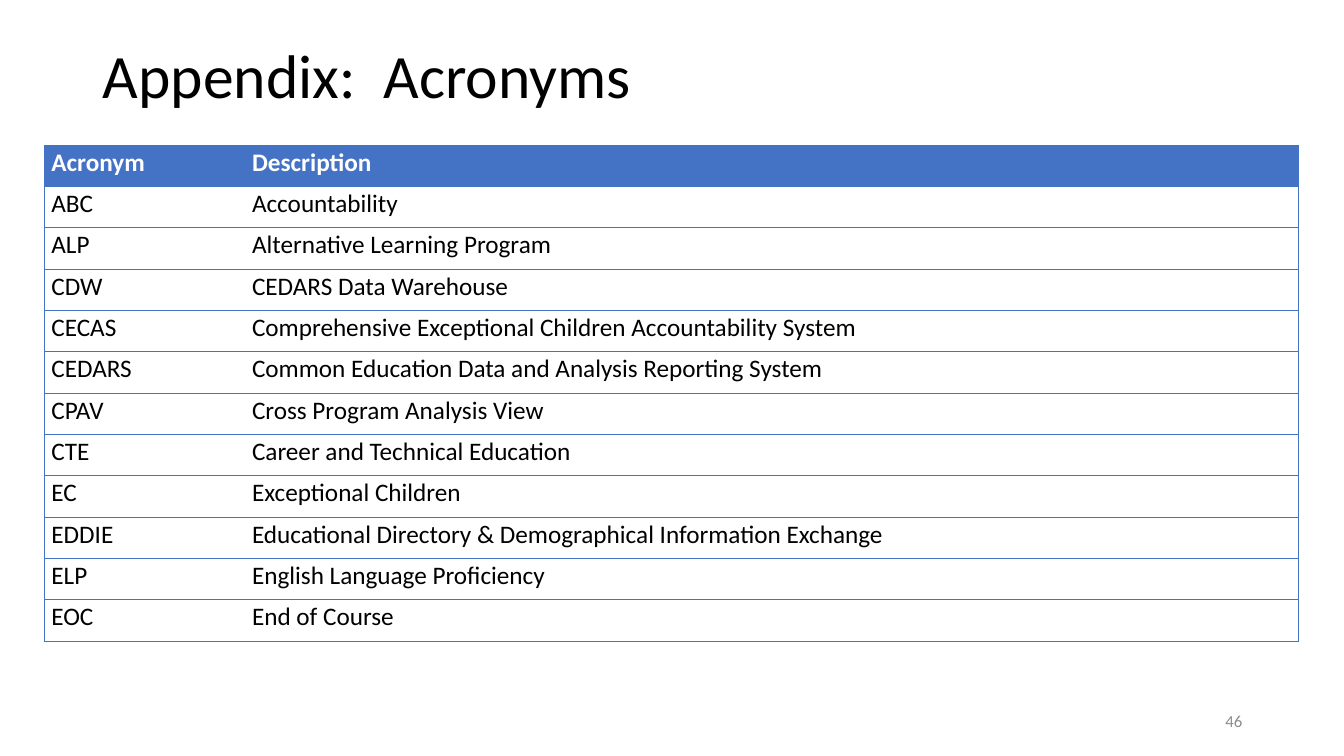
from lxml import etree
from pptx import Presentation
from pptx import util as u
from pptx.dml import color
from pptx.enum import text
from pptx.oxml import ns

PX = 9144
FONT = "Calibri"
COLORS = {"black": "000000", "white": "FFFFFF", "blue": "4472C4", "gray": "8C8C8C"}
COLUMN_WIDTHS = (199, 1045)
ROW_HEIGHT = 41
ACRONYMS = [
    ("Acronym", "Description"),
    ("ABC", "Accountability"),
    ("ALP", "Alternative Learning Program"),
    ("CDW", "CEDARS Data Warehouse"),
    ("CECAS", "Comprehensive Exceptional Children Accountability System"),
    ("CEDARS", "Common Education Data and Analysis Reporting System"),
    ("CPAV", "Cross Program Analysis View"),
    ("CTE", "Career and Technical Education"),
    ("EC", "Exceptional Children"),
    ("EDDIE", "Educational Directory & Demographical Information Exchange"),
    ("ELP", "English Language Proficiency"),
    ("EOC", "End of Course"),
]


def px(*lengths):
    return [u.Emu(length * PX) for length in lengths]


def style(paragraph, size, ink, bold=False, spacing=1.0, align=text.PP_ALIGN.LEFT):
    paragraph.alignment = align
    paragraph.line_spacing = spacing
    font = paragraph.font
    font.name, font.size, font.bold = FONT, u.Pt(size), bold
    font.color.rgb = color.RGBColor.from_string(COLORS[ink])


def add_title(slide, words):
    title = slide.shapes.title
    title.left, title.top, title.width, title.height = px(92, 40, 1150, 145)
    frame = title.text_frame
    frame.text = words
    frame.auto_size = text.MSO_AUTO_SIZE.NONE
    frame.vertical_anchor = text.MSO_ANCHOR.TOP
    style(frame.paragraphs[0], 44, "black", spacing=0.9)


def set_borders(cell, visible_sides):
    properties = cell._tc.get_or_add_tcPr()
    for side in "LRTB":
        line = etree.SubElement(properties, ns.qn(f"a:ln{side}"), w=str(u.Pt(0.5)))
        if side in visible_sides:
            fill = etree.SubElement(line, ns.qn("a:solidFill"))
            etree.SubElement(fill, ns.qn("a:srgbClr"), val=COLORS["blue"])
        else:
            etree.SubElement(line, ns.qn("a:noFill"))


def fill_cell(cell, words, is_header, outer_side):
    cell.text = words
    cell.margin_left, cell.margin_right = px(7, 7)
    cell.margin_top = cell.margin_bottom = 0
    ink = "white" if is_header else "black"
    style(cell.text_frame.paragraphs[0], 18, ink, bold=is_header, spacing=1.07)
    set_borders(cell, outer_side + "TB")
    if is_header:
        cell.fill.solid()
        cell.fill.fore_color.rgb = color.RGBColor.from_string(COLORS["blue"])
    else:
        cell.fill.background()


def add_acronym_table(slide):
    size = px(44, 144, sum(COLUMN_WIDTHS), ROW_HEIGHT * len(ACRONYMS))
    table = slide.shapes.add_table(len(ACRONYMS), len(COLUMN_WIDTHS), *size).table
    table.horz_banding = False
    for column, width in zip(table.columns, px(*COLUMN_WIDTHS)):
        column.width = width
    for index, (row, entry) in enumerate(zip(table.rows, ACRONYMS)):
        row.height = px(ROW_HEIGHT)[0]
        for cell, words, outer_side in zip(row.cells, entry, "LR"):
            fill_cell(cell, words, index == 0, outer_side)


def add_slide_number(slide, number):
    frame = slide.shapes.add_textbox(*px(942, 695, 300, 40)).text_frame
    frame.word_wrap = True
    frame.vertical_anchor = text.MSO_ANCHOR.MIDDLE
    frame.text = number
    style(frame.paragraphs[0], 12, "gray", align=text.PP_ALIGN.RIGHT)


def main():
    """Build the acronym appendix slide."""
    presentation = Presentation()
    presentation.slide_width, presentation.slide_height = px(1333, 750)
    slide = presentation.slides.add_slide(presentation.slide_layouts[5])
    add_title(slide, "Appendix:  Acronyms")
    add_acronym_table(slide)
    add_slide_number(slide, "46")
    presentation.save("out.pptx")


if __name__ == "__main__":
    main()
